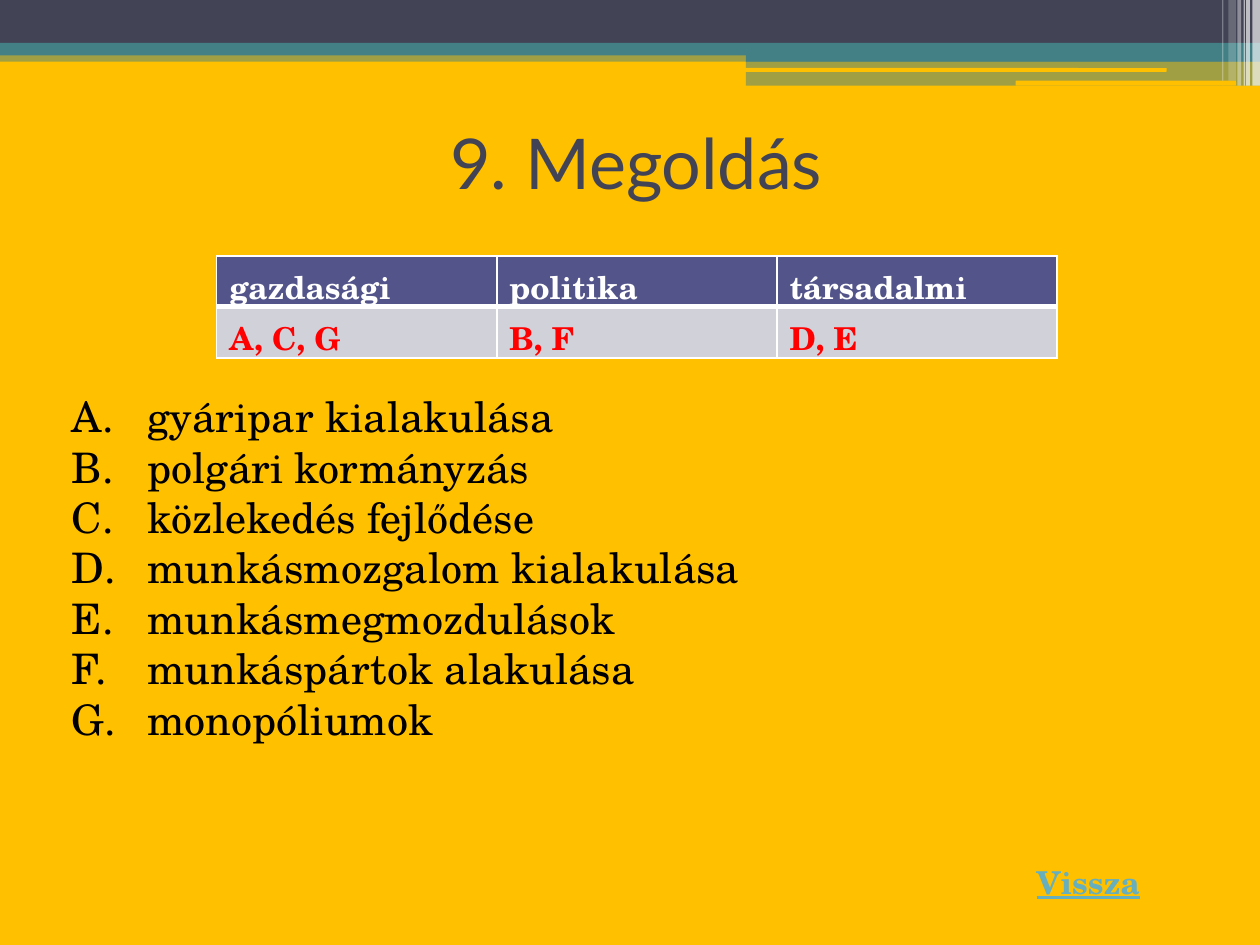
from typing import NamedTuple

from lxml import etree
from pptx import Presentation
from pptx import util as u
from pptx.dml.color import RGBColor
from pptx.enum import shapes, text
from pptx.oxml.ns import qn

WIDTH, HEIGHT = 10, 7.5
SERIF, SANS = "TeX Gyre Schola", "Lato"
COLORS = {
    "gold": "FFC000", "slate": "424456", "teal": "438086", "white": "FFFFFF",
    "header": "53548A", "answer": "D1D1DA", "red": "FF0000", "black": "000000",
    "link": "67AFBD",
}


class Band(NamedTuple):
    left: float
    top: float
    width: float
    height: float
    color: str
    opacity: int = 100
    rounded: bool = False


class Stripe(NamedTuple):
    left: float
    width: float
    height: float
    opacity: int


BANDS = [
    Band(0, 0.4, WIDTH, 0.09, "teal", 50),
    Band(0, 0, WIDTH, 0.34, "slate"),
    Band(0, 0.34, WIDTH, 0.1, "teal"),
    Band(5.92, 0.39, 4.08, 0.1, "teal"),
    Band(5.92, 0.48, 4.08, 0.2, "teal", 50),
    Band(5.91, 0.54, 3.35, 0.03, "gold", rounded=True),
    Band(8.06, 0.64, 1.75, 0.04, "gold", rounded=True),
]
STRIPES = [
    Stripe(9.94, 0.06, 0.68, 65), Stripe(9.89, 0.03, 0.68, 65),
    Stripe(9.87, 0.01, 0.68, 60), Stripe(9.82, 0.03, 0.68, 40),
    Stripe(9.75, 0.06, 0.64, 20), Stripe(9.7, 0.01, 0.64, 30),
]
ANSWERS = {"gazdasági": "A, C, G", "politika": "B, F", "társadalmi": "D, E"}
STATEMENTS = [
    "gyáripar kialakulása", "polgári kormányzás", "közlekedés fejlődése",
    "munkásmozgalom kialakulása", "munkásmegmozdulások",
    "munkáspártok alakulása", "monopóliumok",
]


def rgb(name: str) -> RGBColor:
    return RGBColor.from_string(COLORS[name])


def style(para, size: float, color: str, face: str = SERIF, bold: bool = False) -> None:
    font = para.font
    font.size, font.name, font.bold = u.Pt(size), face, bold
    font.color.rgb = rgb(color)


def place(shape, left: float, top: float, width: float, height: float) -> None:
    shape.left, shape.top = u.Inches(left), u.Inches(top)
    shape.width, shape.height = u.Inches(width), u.Inches(height)


def draw_band(page, band: Band) -> None:
    preset = shapes.MSO_SHAPE.ROUNDED_RECTANGLE if band.rounded else shapes.MSO_SHAPE.RECTANGLE
    box = page.shapes.add_shape(preset, *map(u.Inches, band[:4]))
    box.shadow.inherit = False
    box.line.fill.background()
    box.fill.solid()
    box.fill.fore_color.rgb = rgb(band.color)
    if band.opacity < 100:
        color = box.fill._xPr.find(".//" + qn("a:srgbClr"))
        etree.SubElement(color, qn("a:alpha"), val=str(band.opacity * 1000))


def add_borders(cell, **points: float) -> None:
    """Draw white cell edges; call before the cell's fill is set."""
    props = cell._tc.get_or_add_tcPr()
    for edge in "LRTB":
        line = etree.SubElement(props, qn("a:ln" + edge), w=str(u.Pt(points.get(edge, 1))))
        fill = etree.SubElement(line, qn("a:solidFill"))
        etree.SubElement(fill, qn("a:srgbClr"), val=COLORS["white"])


def fill_cell(cell, words: str, color: str, background: str) -> None:
    cell.text = words
    style(cell.text_frame.paragraphs[0], 18, color, bold=True)
    cell.fill.solid()
    cell.fill.fore_color.rgb = rgb(background)


def draw_answers(page) -> None:
    frame = page.shapes.add_table(2, len(ANSWERS), *map(u.Inches, (1.72, 2.03, 6.67, 0.81)))
    table = frame.table
    for column, (heading, letters) in enumerate(ANSWERS.items()):
        top, bottom = table.cell(0, column), table.cell(1, column)
        add_borders(top, B=3)
        add_borders(bottom, T=3)
        fill_cell(top, heading, "white", "header")
        fill_cell(bottom, letters, "red", "answer")


def write_title(page) -> None:
    title = page.shapes.title
    place(title, 0.55, 0.7, 9, 1.17)
    title.text_frame.text = "9. Megoldás"
    title.text_frame.vertical_anchor = text.MSO_ANCHOR.MIDDLE
    para = title.text_frame.paragraphs[0]
    para.alignment = text.PP_ALIGN.CENTER
    style(para, 40, "slate", SANS)


def write_statements(page) -> None:
    body = page.placeholders[1]
    place(body, 0.47, 3.05, 8.44, 2.93)
    frame = body.text_frame
    frame.text = "\n".join(STATEMENTS)
    frame.auto_size = text.MSO_AUTO_SIZE.NONE
    indent = u.Inches(0.6)
    for para in frame.paragraphs:
        style(para, 24, "black")
        para.space_before = u.Pt(0)
        props = para._p.get_or_add_pPr()
        props.set("marL", str(indent))
        props.set("indent", str(-indent))
        bullet_font = etree.Element(qn("a:buFont"), typeface=SERIF)
        numbering = etree.Element(qn("a:buAutoNum"), type="alphaUcPeriod")
        props.find(qn("a:defRPr")).addprevious(bullet_font)
        bullet_font.addnext(numbering)


def write_back_label(page) -> None:
    box = page.shapes.add_textbox(*map(u.Inches, (8.13, 6.8, 1.03, 0.4)))
    box.text_frame.word_wrap = False
    para = box.text_frame.paragraphs[0]
    para.text = "Vissza"
    style(para, 18, "link", bold=True)
    para.font.underline = True


def main() -> None:
    deck = Presentation()
    deck.slide_width, deck.slide_height = u.Inches(WIDTH), u.Inches(HEIGHT)
    page = deck.slides.add_slide(deck.slide_layouts[1])
    page.background.fill.solid()
    page.background.fill.fore_color.rgb = rgb("gold")
    for band in BANDS:
        draw_band(page, band)
    for stripe in STRIPES:
        draw_band(page, Band(stripe.left, 0, stripe.width, stripe.height, "white", stripe.opacity))
    write_title(page)
    write_back_label(page)
    draw_answers(page)
    write_statements(page)
    deck.save("out.pptx")


if __name__ == "__main__":
    main()
